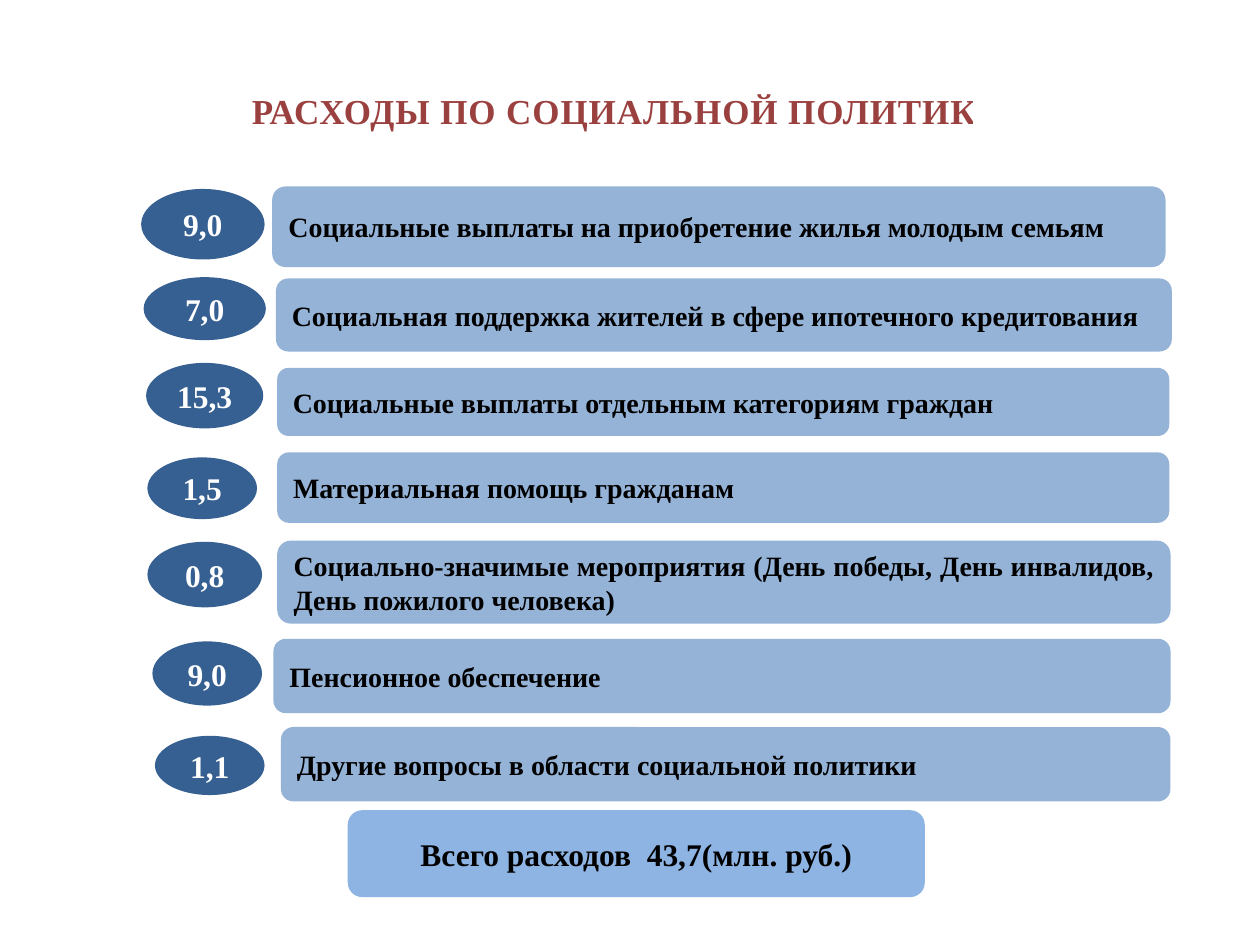
import dataclasses

import lxml.etree
import pptx
import pptx.dml.color
import pptx.enum.shapes
import pptx.enum.text
import pptx.oxml.ns
import pptx.util

SHAPE = pptx.enum.shapes.MSO_SHAPE
ALIGN = pptx.enum.text.PP_ALIGN
COLUMNS, ROWS = 100, 75


@dataclasses.dataclass(frozen=True)
class Theme:
    font: str = "Times New Roman"
    heading: str = "953735"
    bar: str = "95B3D7"
    badge: str = "376092"
    total: str = "8EB4E3"
    dark: str = "000000"
    light: str = "FFFFFF"
    heading_size: int = 20
    figure_size: int = 18
    label_size: int = 16


def rgb(value):
    return pptx.dml.color.RGBColor.from_string(value)


def write(frame, text, *, font, size, color, align=ALIGN.CENTER):
    frame.word_wrap = True
    frame.auto_size = pptx.enum.text.MSO_AUTO_SIZE.NONE
    frame.vertical_anchor = pptx.enum.text.MSO_ANCHOR.MIDDLE
    para = frame.paragraphs[0]
    para.alignment = align
    span = para.add_run()
    span.text = text
    span.font.name = font
    span.font.size = pptx.util.Pt(size)
    span.font.bold = True
    span.font.color.rgb = rgb(color)
    return span


class SlideBuilder:
    def __init__(self, deck, theme):
        self.deck = deck
        self.theme = theme
        self.page = deck.slides.add_slide(deck.slide_layouts[5])

    def place(self, left, top, width, height):
        column = self.deck.slide_width / COLUMNS
        row = self.deck.slide_height / ROWS
        return (round(left * column), round(top * row),
                round(width * column), round(height * row))

    def title(self, text, area):
        box = self.page.shapes.title
        box.left, box.top, box.width, box.height = self.place(*area)
        span = write(box.text_frame, text, font=self.theme.font,
                     size=self.theme.heading_size, color=self.theme.heading)
        properties = span.font._element
        properties.set("spc", "50")
        tint = properties.find(".//" + pptx.oxml.ns.qn("a:srgbClr"))
        lxml.etree.SubElement(tint, pptx.oxml.ns.qn("a:alpha"), val="95000")

    def shape(self, kind, text, area, *, fill, **style):
        box = self.page.shapes.add_shape(kind, *self.place(*area))
        box.shadow.inherit = False
        box.fill.solid()
        box.fill.fore_color.rgb = rgb(fill)
        box.line.fill.background()
        write(box.text_frame, text, font=self.theme.font, **style)

    def bar(self, text, area):
        self.shape(SHAPE.FLOWCHART_ALTERNATE_PROCESS, text, area,
                   fill=self.theme.bar, size=self.theme.label_size,
                   color=self.theme.dark, align=ALIGN.JUSTIFY)

    def badge(self, text, area):
        self.shape(SHAPE.OVAL, text, area, fill=self.theme.badge,
                   size=self.theme.figure_size, color=self.theme.light)

    def total(self, text, area):
        self.shape(SHAPE.ROUNDED_RECTANGLE, text, area, fill=self.theme.total,
                   size=self.theme.figure_size, color=self.theme.dark)


EXPENSES = [
    ("9,0", (11.2, 15, 9.8, 5.6),
     "Социальные выплаты на приобретение жилья молодым семьям",
     (21.6, 14.8, 70.9, 6.4)),
    ("7,0", (11.4, 22, 9.7, 5),
     "Социальная поддержка жителей в сфере ипотечного кредитования",
     (21.9, 22.1, 71.1, 5.8)),
    ("15,3", (11.6, 28.8, 9.3, 5.2),
     "Социальные выплаты отдельным категориям граждан",
     (22, 29.2, 70.8, 5.4)),
    ("1,5", (11.7, 36.3, 8.7, 4.9),
     "Материальная помощь гражданам",
     (22, 35.9, 70.8, 5.6)),
    ("0,8", (11.7, 43, 9.1, 5.2),
     "Социально-значимые мероприятия (День победы, День инвалидов, "
     "День пожилого человека)",
     (22, 42.9, 70.9, 6.6)),
    ("9,0", (12.1, 50.9, 8.7, 5.1),
     "Пенсионное обеспечение",
     (21.7, 50.7, 71.2, 5.9)),
    ("1,1", (12.3, 58.4, 8.7, 4.7),
     "Другие вопросы в области социальной политики",
     (22.3, 57.7, 70.6, 5.9)),
]


def main():
    deck = pptx.Presentation()
    deck.slide_width = pptx.util.Inches(10)
    deck.slide_height = pptx.util.Inches(7.5)
    builder = SlideBuilder(deck, Theme())
    builder.title("РАСХОДЫ ПО СОЦИАЛЬНОЙ ПОЛИТИКЕ", (4.8, 6, 89.8, 5.5))
    for amount, badge_area, label, bar_area in EXPENSES:
        builder.bar(label, bar_area)
        builder.badge(amount, badge_area)
    builder.total("Всего расходов  43,7(млн. руб.)", (27.6, 64.3, 45.8, 6.9))
    deck.save("out.pptx")


if __name__ == "__main__":
    main()
